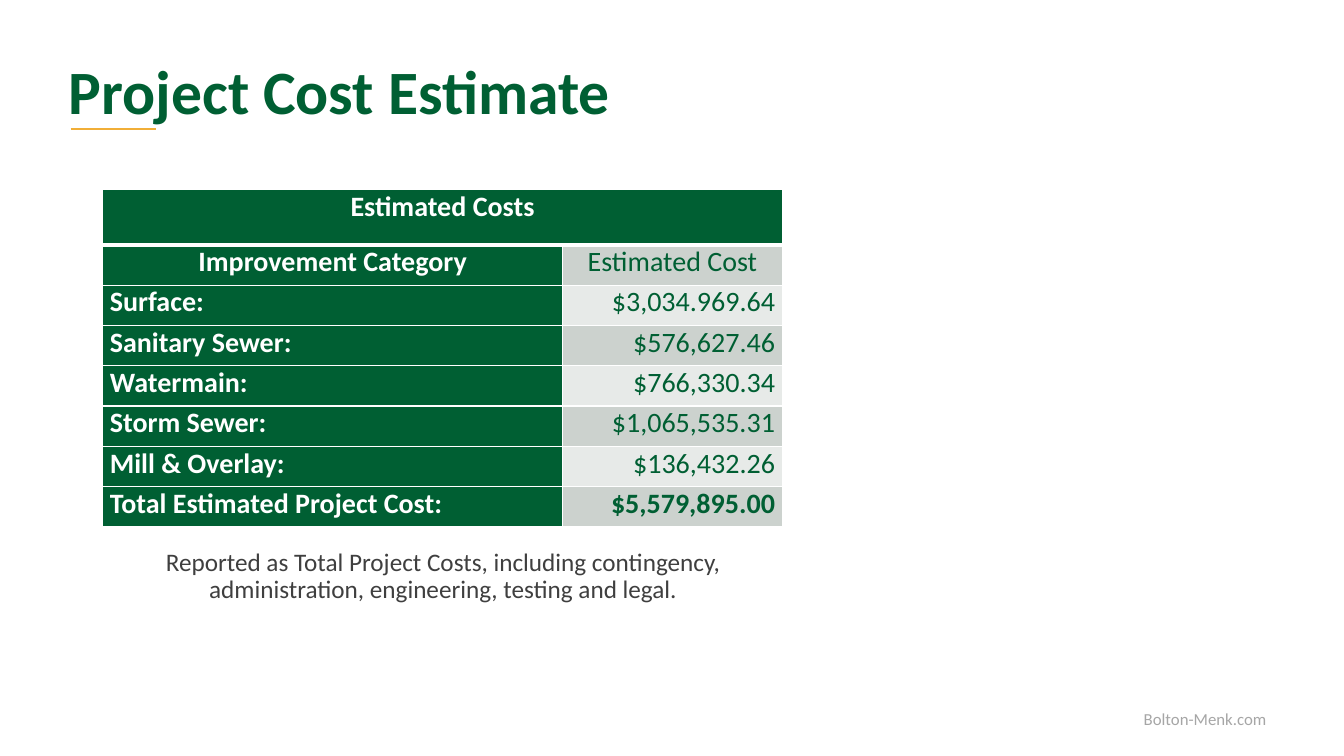
from pptx import Presentation
from pptx.dml.color import RGBColor
from pptx.enum.shapes import MSO_CONNECTOR as Connector
from pptx.enum.text import MSO_ANCHOR as Anchor, MSO_AUTO_SIZE as AutoSize, PP_ALIGN as Align
from pptx.oxml.ns import qn
from pptx.util import Inches, Pt
from lxml.etree import SubElement

WIDTH, HEIGHT = Inches(13.33), Inches(7.5)
FONT = "Calibri"
COLORS = {
    "green": "005F33",
    "gold": "F1AE37",
    "white": "FFFFFF",
    "dark band": "CCD2CE",
    "light band": "E7EAE8",
    "text": "3F3F3F",
    "footer": "A6A6A6",
}
COSTS = [
    ("Improvement Category", "Estimated Cost"),
    ("Surface:", "$3,034.969.64"),
    ("Sanitary Sewer:", "$576,627.46"),
    ("Watermain:", "$766,330.34"),
    ("Storm Sewer:", "$1,065,535.31"),
    ("Mill & Overlay:", "$136,432.26"),
    ("Total Estimated Project Cost:", "$5,579,895.00"),
]


def color(name):
    """Return the named colour."""
    return RGBColor.from_string(COLORS[name])


def across(percent):
    """Return a share of the slide's width."""
    return round(WIDTH * percent / 100)


def down(percent):
    """Return a share of the slide's height."""
    return round(HEIGHT * percent / 100)


def place(shape, left, top, width, height):
    """Move and size a shape in percent of the slide."""
    shape.left, shape.top = across(left), down(top)
    shape.width, shape.height = across(width), down(height)


def write(text_frame, text, size, color_name, align=Align.LEFT, bold=False):
    """Fill a text frame with one formatted paragraph."""
    text_frame.text = text
    paragraph = text_frame.paragraphs[0]
    paragraph.alignment = align
    paragraph.space_before = Pt(0)
    font = paragraph.runs[0].font
    font.name, font.size, font.bold = FONT, Pt(size), bold
    font.color.rgb = color(color_name)
    return paragraph


def set_frame(text_frame, auto_size=AutoSize.NONE):
    """Make a text frame wrap and start at its top."""
    text_frame.word_wrap = True
    text_frame.auto_size = auto_size
    text_frame.vertical_anchor = Anchor.TOP


def add_title(slide, text):
    """Format the title placeholder."""
    title = slide.shapes.title
    place(title, 4.35, 7.47, 86.27, 11.87)
    set_frame(title.text_frame)
    write(title.text_frame, text, 44, "green", bold=True).line_spacing = 0.9


def add_note(slide, text):
    """Format the body placeholder as an unbulleted note."""
    body = slide.placeholders[1]
    place(body, 10.43, 72, 45.09, 8.93)
    set_frame(body.text_frame)
    paragraph = write(body.text_frame, text, 18, "text", Align.CENTER)
    paragraph.line_spacing = 0.9
    properties = paragraph._p.get_or_add_pPr()
    properties.set("marL", "0")
    properties.set("indent", "0")
    SubElement(properties, qn("a:buNone"))


def add_footer(slide, text):
    """Add the web address at the lower right."""
    box = slide.shapes.add_textbox(across(75.77), down(93.07), across(19.2), down(4))
    set_frame(box.text_frame, AutoSize.SHAPE_TO_FIT_TEXT)
    write(box.text_frame, text, 12, "footer", Align.RIGHT)


def add_accent(slide):
    """Draw the short rule under the title."""
    level = down(17.07)
    rule = slide.shapes.add_connector(
        Connector.STRAIGHT, across(5.25), level, across(11.63), level
    )
    rule.line.color.rgb = color("gold")
    rule.line.width = Pt(2)
    SubElement(rule._element.spPr, qn("a:effectLst"))


def style_cell(cell, fill_name, top=1, bottom=1):
    """Set the borders, fill and margins of a cell."""
    properties = cell._tc.get_or_add_tcPr()
    for side, width in (("L", 1), ("R", 1), ("T", top), ("B", bottom)):
        border = SubElement(properties, qn(f"a:ln{side}"), w=str(Pt(width)))
        fill = SubElement(border, qn("a:solidFill"))
        SubElement(fill, qn("a:srgbClr"), val=COLORS["white"])
    cell.fill.solid()
    cell.fill.fore_color.rgb = color(fill_name)
    cell.margin_left = cell.margin_right = Inches(0.07)
    cell.margin_top = cell.margin_bottom = 0
    cell.vertical_anchor = Anchor.TOP


def add_cost_table(slide, heading, costs):
    """Add the cost table under one merged heading."""
    columns, heading_row, cost_row = (34.21, 16.35), 7.33, 5.33
    table = slide.shapes.add_table(
        len(costs) + 1, len(columns), across(7.65), down(25.07),
        across(sum(columns)), down(heading_row + cost_row * len(costs)),
    ).table
    for column, width in zip(table.columns, columns):
        column.width = across(width)
    for index, row in enumerate(table.rows):
        row.height = down(cost_row if index else heading_row)
    for cell in table.rows[0].cells:
        style_cell(cell, "green", bottom=3)
    table.cell(0, 0).merge(table.cell(0, 1))
    write(table.cell(0, 0).text_frame, heading, 20, "white", Align.CENTER, True)
    for index, (category, cost) in enumerate(costs, start=1):
        label, amount = table.rows[index].cells
        first, last = index == 1, index == len(costs)
        top = 3 if first else 1
        style_cell(label, "green", top)
        style_cell(amount, "dark band" if index % 2 else "light band", top)
        write(label.text_frame, category, 20, "white",
              Align.CENTER if first else Align.LEFT, True)
        write(amount.text_frame, cost, 20, "green",
              Align.CENTER if first else Align.RIGHT, last)


def main():
    """Build and save the cost estimate slide."""
    presentation = Presentation()
    presentation.slide_width, presentation.slide_height = WIDTH, HEIGHT
    slide = presentation.slides.add_slide(presentation.slide_layouts[1])
    add_footer(slide, "Bolton-Menk.com")
    add_accent(slide)
    add_title(slide, "Project Cost Estimate")
    add_note(slide, "Reported as Total Project Costs, including contingency, "
                    "administration, engineering, testing and legal.")
    add_cost_table(slide, "Estimated Costs", COSTS)
    presentation.save("out.pptx")


if __name__ == "__main__":
    main()
